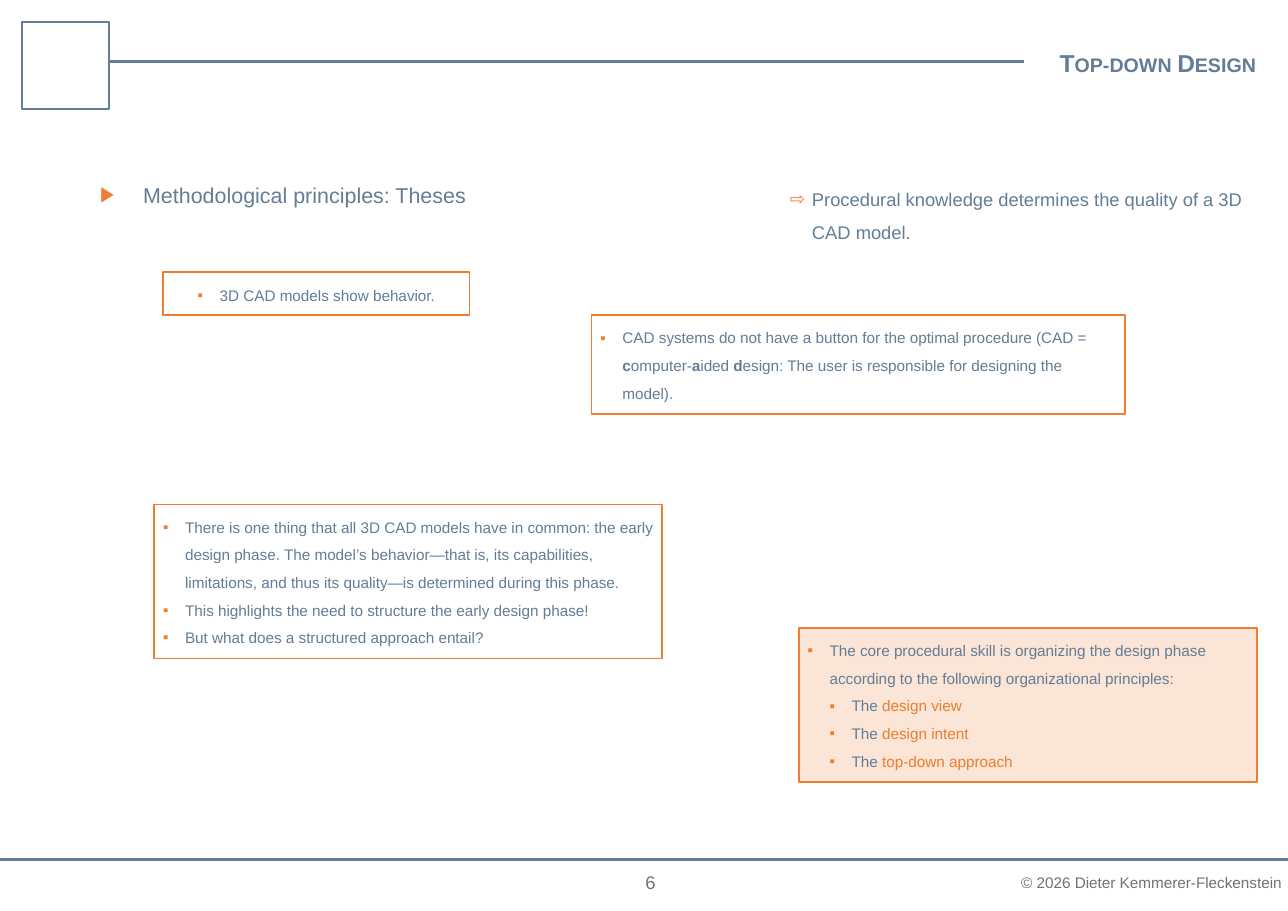
from lxml import etree
from pptx import Presentation
from pptx.dml.color import RGBColor
from pptx.enum.shapes import MSO_CONNECTOR, MSO_SHAPE
from pptx.enum.text import MSO_ANCHOR, PP_ALIGN
from pptx.oxml.ns import qn
from pptx.util import Inches, Pt

BLUE = RGBColor(0x63, 0x7D, 0x96)
ORANGE = RGBColor(0xED, 0x7D, 0x31)
PEACH = RGBColor(0xFB, 0xE5, 0xD6)
GRAY = RGBColor(0x76, 0x71, 0x71)
FONT = "Arial"
LEFT, CENTER = PP_ALIGN.LEFT, PP_ALIGN.CENTER
TOP, MIDDLE = MSO_ANCHOR.TOP, MSO_ANCHOR.MIDDLE
RECT, ROUND = MSO_SHAPE.RECTANGLE, MSO_SHAPE.ROUNDED_RECTANGLE
STRAIGHT = MSO_CONNECTOR.STRAIGHT

CAD = [
    "CAD systems do not have a button for the optimal procedure (CAD = ",
    ("c", True, BLUE), "omputer-", ("a", True, BLUE), "ided ",
    ("d", True, BLUE),
    "esign: The user is responsible for designing the model).",
]
PHASE = [
    "There is one thing that all 3D CAD models have in common: the early "
    "design phase. The model’s behavior—that is, its capabilities, "
    "limitations, and thus its quality—is determined during this phase.",
    "This highlights the need to structure the early design phase!",
    "But what does a structured approach entail?",
]
SKILL = ("The core procedural skill is organizing the design phase "
         "according to the following organizational principles:")
TERMS = ["design view", "design intent", "top-down approach"]


def add_rule(slide, left, right, y, width):
    rule = slide.shapes.add_connector(
        STRAIGHT, Inches(left), Inches(y), Inches(right), Inches(y))
    rule.line.color.rgb = BLUE
    rule.line.width = Pt(width)
    etree.SubElement(rule._element.spPr, qn("a:effectLst"))


def set_font(font, size, color, bold=False):
    font.name = FONT
    font.size = Pt(size)
    font.bold = bold
    font.color.rgb = color


def add_label(slide, place, text, size, color, align=LEFT, anchor=TOP,
              title=False):
    box = slide.shapes.add_textbox(*map(Inches, place))
    frame = box.text_frame
    frame.word_wrap = True
    frame.vertical_anchor = anchor
    para = frame.paragraphs[0]
    para.alignment = align
    run = para.add_run()
    run.text = text
    set_font(para.font, size, color, title)
    if title:
        run._r.get_or_add_rPr().set("cap", "small")


def add_bullet(para, mark, margin, hang):
    props = para._p.get_or_add_pPr()
    props.set("marL", str(Inches(margin)))
    props.set("indent", str(-Inches(hang)))
    color = etree.SubElement(props, qn("a:buClr"))
    etree.SubElement(color, qn("a:srgbClr"), val=str(ORANGE))
    etree.SubElement(props, qn("a:buFont"), typeface=FONT)
    etree.SubElement(props, qn("a:buChar"), char=mark)


def add_item(para, parts, size, mark, margin, hang, space, align):
    para.alignment = align
    para.line_spacing = space
    add_bullet(para, mark, margin, hang)
    set_font(para.font, size, BLUE)
    for part in parts:
        run = para.add_run()
        if isinstance(part, str):
            run.text = part
        else:
            run.text, run.font.bold, run.font.color.rgb = part


def add_box(slide, place, items, size=10, mark="▪", margin=0.2, space=1.5,
            align=LEFT, line=True, fill=None, corner=0):
    box = slide.shapes.add_shape(ROUND, *map(Inches, place))
    box.adjustments[0] = corner
    box.shadow.inherit = False
    if fill:
        box.fill.solid()
        box.fill.fore_color.rgb = fill
    else:
        box.fill.background()
    if line:
        box.line.color.rgb = ORANGE
        box.line.width = Pt(1)
    else:
        box.line.fill.background()
    frame = box.text_frame
    frame.word_wrap = True
    frame.vertical_anchor = TOP
    frame.margin_left = frame.margin_right = Inches(0.08)
    frame.margin_top = frame.margin_bottom = Inches(0.04)
    for index, (level, parts) in enumerate(items):
        para = frame.add_paragraph() if index else frame.paragraphs[0]
        add_item(para, parts, size, mark, margin * (level + 1), margin,
                 space, align)


def add_frame(slide):
    add_rule(slide, 0.98, 9.29, 0.56, 1.75)
    add_rule(slide, 0, 11.69, 7.8, 2)
    add_label(slide, (9.17, 7.88, 2.68, 0.27),
              "© 2026 Dieter Kemmerer-Fleckenstein", 10, GRAY)
    add_label(slide, (9.33, 0.39, 2.36, 0.37), "Top-down Design", 16, BLUE,
              CENTER, title=True)
    badge = slide.shapes.add_shape(
        RECT, *map(Inches, (0.2, 0.2, 0.79, 0.79)))
    badge.shadow.inherit = False
    badge.fill.background()
    badge.line.color.rgb = BLUE
    badge.line.width = Pt(1.75)
    add_label(slide, (5.51, 7.87, 0.79, 0.28), "6", 12, GRAY, CENTER, MIDDLE)


def main():
    deck = Presentation()
    deck.slide_width, deck.slide_height = Inches(11.69), Inches(8.27)
    slide = deck.slides.add_slide(deck.slide_layouts[6])
    add_frame(slide)
    add_box(slide, (1.48, 2.47, 2.78, 0.39),
            [(0, ["3D CAD models show behavior."])], align=CENTER)
    add_box(slide, (0.79, 1.57, 5.83, 0.79),
            [(0, ["Methodological principles: Theses"])], size=14, mark="▶",
            margin=0.39, space=1.0, line=False, corner=0.17)
    add_box(slide, (7.09, 1.57, 4.44, 0.71),
            [(0, ["Procedural knowledge determines the quality of a 3D CAD "
                  "model."])], size=12, mark="⇨", line=False)
    add_box(slide, (5.37, 2.86, 4.84, 0.9), [(0, CAD)])
    add_box(slide, (1.4, 4.58, 4.61, 1.4), [(0, [text]) for text in PHASE])
    terms = [(1, ["The ", (term, False, ORANGE)]) for term in TERMS]
    add_box(slide, (7.25, 5.7, 4.16, 1.4), [(0, [SKILL])] + terms, fill=PEACH)
    deck.save("out.pptx")


if __name__ == "__main__":
    main()
